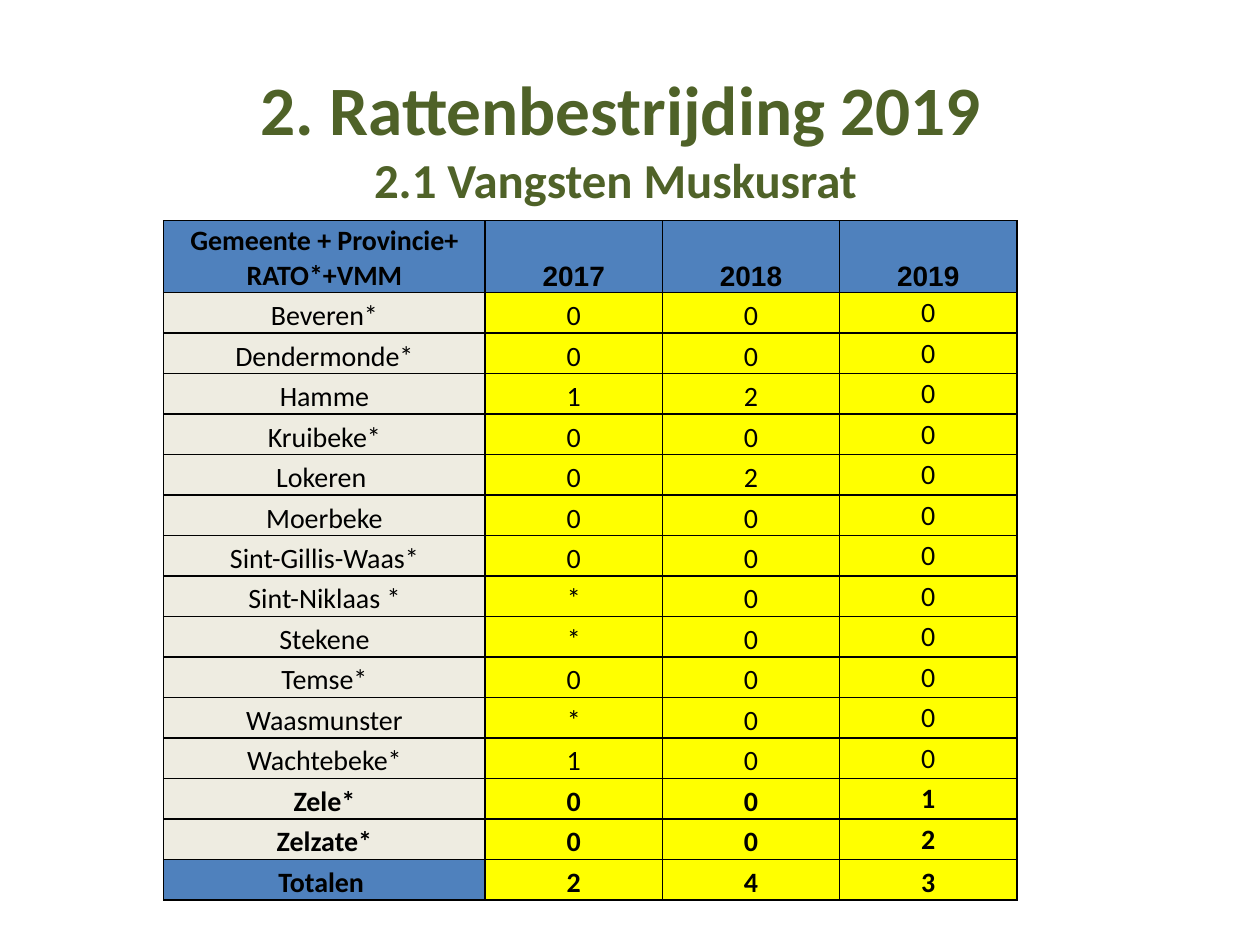
from lxml.etree import SubElement
from pptx import Presentation
from pptx.dml.color import RGBColor
from pptx.enum.text import MSO_ANCHOR as Anchor, MSO_AUTO_SIZE as AutoSize, PP_ALIGN as Align
from pptx.oxml.ns import qn
from pptx.util import Cm, Pt

GREEN, BLUE, BEIGE, YELLOW, BLACK = "4F6228", "4F81BD", "EEECE1", "FFFF00", "000000"


def rgb(hex_code):
    return RGBColor.from_string(hex_code)


def write(paragraph, text, size=16, font="Calibri", color=BLACK, bold=False):
    paragraph.alignment = Align.CENTER
    run = paragraph.add_run()
    run.text = text
    run.font.size, run.font.name, run.font.bold = Pt(size), font, bold
    run.font.color.rgb = rgb(color)


prs = Presentation()
prs.slide_width, prs.slide_height = Cm(25.4), Cm(19.05)
slide = prs.slides.add_slide(prs.slide_layouts[5])

# Title and subtitle, pushed down by the top inset
title = slide.shapes.title
title.left, title.top, title.width, title.height = Cm(1.09), Cm(0.33), Cm(22.86), Cm(3.18)
title_frame = title.text_frame
title_frame.auto_size = AutoSize.NONE
title_frame.word_wrap = True
title_frame.vertical_anchor = Anchor.MIDDLE
title_frame.margin_top = Cm(1.83)
heading = title_frame.paragraphs[0]
write(heading, "2. Rattenbestrijding 2019", size=39.6, color=GREEN, bold=True)
heading.add_line_break()
write(heading, "2.1 Vangsten Muskusrat ", size=27.9, color=GREEN, bold=True)

# Catches per municipality and year
catches = [
    ("Gemeente\u00a0+ Provincie+ RATO*+VMM", "2017", "2018", "2019"),
    ("Beveren*", "0", "0", "0"),
    ("Dendermonde*", "0", "0", "0"),
    ("Hamme", "1", "2", "0"),
    ("Kruibeke*", "0", "0", "0"),
    ("Lokeren ", "0", "2", "0"),
    ("Moerbeke", "0", "0", "0"),
    ("Sint-Gillis-Waas*", "0", "0", "0"),
    ("Sint-Niklaas *", "*", "0", "0"),
    ("Stekene", "*", "0", "0"),
    ("Temse*", "0", "0", "0"),
    ("Waasmunster", "*", "0", "0"),
    ("Wachtebeke*", "1", "0", "0"),
    ("Zele*", "0", "0", "1"),
    ("Zelzate*", "0", "0", "2"),
    ("Totalen ", "2", "4", "3"),
]
last = len(catches) - 1
first_bold = last - 2
table_width, name_width = 17.2, 6.48
table_height, header_height = 13.69, 1.45
table = slide.shapes.add_table(len(catches), 4, Cm(3.3), Cm(4.45),
                               Cm(table_width), Cm(table_height)).table

# Column widths and row heights
for c, column in enumerate(table.columns):
    column.width = Cm(name_width if c == 0 else (table_width - name_width) / 3)
for r, row in enumerate(table.rows):
    row.height = Cm(header_height if r == 0 else (table_height - header_height) / last)

# Cell text, fills and borders
for r, values in enumerate(catches):
    for c, value in enumerate(values):
        cell = table.cell(r, c)
        cell.margin_left = cell.margin_right = cell.margin_top = Cm(0.02)
        cell.margin_bottom = 0
        latest_year = c == 3 and 0 < r < last
        cell.vertical_anchor = Anchor.MIDDLE if latest_year else Anchor.BOTTOM
        write(cell.text_frame.paragraphs[0], value,
              font="Arial" if r == 0 and c > 0 else "Calibri",
              bold=r == 0 or r >= first_bold)

        cell_props = cell._tc.get_or_add_tcPr()
        for side in ("a:lnL", "a:lnR", "a:lnT", "a:lnB"):
            border = SubElement(cell_props, qn(side), w=str(Pt(1)))
            SubElement(SubElement(border, qn("a:solidFill")), qn("a:srgbClr"), val=BLACK)
        cell.fill.solid()
        if r == 0 or (r == last and c == 0):
            cell.fill.fore_color.rgb = rgb(BLUE)
        else:
            cell.fill.fore_color.rgb = rgb(BEIGE if c == 0 else YELLOW)

prs.save("out.pptx")
